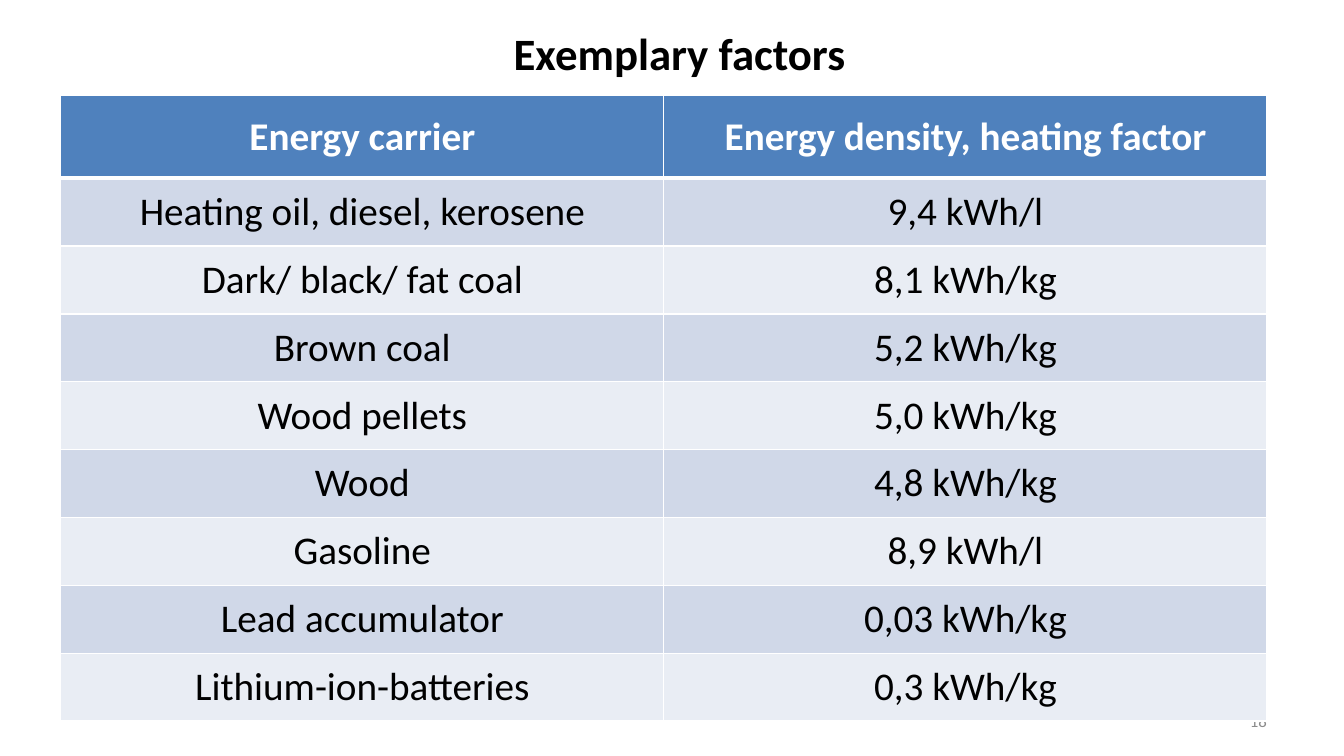
from pptx import Presentation
from pptx.dml.color import RGBColor
from pptx.enum.text import MSO_ANCHOR as Anchor, MSO_AUTO_SIZE as Fit, PP_ALIGN as Align
from pptx.oxml import parse_xml
from pptx.oxml.ns import nsdecls
from pptx.util import Cm, Pt

# Content
TITLE = "Exemplary factors"
PAGE = "18"
ROWS = [
    ("Energy carrier", "Energy density, heating factor"),
    ("Heating oil, diesel, kerosene", "9,4 kWh/l"),
    ("Dark/ black/ fat coal", "8,1 kWh/kg"),
    ("Brown coal", "5,2 kWh/kg"),
    ("Wood pellets", "5,0 kWh/kg"),
    ("Wood", "4,8 kWh/kg"),
    ("Gasoline", "8,9 kWh/l"),
    ("Lead accumulator", "0,03 kWh/kg"),
    ("Lithium-ion-batteries", "0,3 kWh/kg"),
]
HEAD, BANDS = "4F81BD", ("E9EDF4", "D0D8E8")
WHITE, BLACK, GREY = "FFFFFF", "000000", "8C8C8C"
HEAD_H, ROW_H, COL_W = 2.09, 1.71, 15.2


def color(code):
    return RGBColor.from_string(code)


def write(frame, text, size, code, align, bold=False):
    frame.text = text
    par = frame.paragraphs[0]
    par.alignment = align
    font = par.font
    font.name, font.size, font.bold = "Calibri", Pt(size), bold
    font.color.rgb = color(code)
    return par


def border(cell, side, width):
    return parse_xml(
        f'<a:ln{side} {nsdecls("a")} w="{Pt(width)}"><a:solidFill>'
        f'<a:srgbClr val="{WHITE}"/></a:solidFill></a:ln{side}>')


prs = Presentation()
prs.slide_width, prs.slide_height = Cm(33.87), Cm(19.05)
slide = prs.slides.add_slide(prs.slide_layouts[5])
shapes = slide.shapes

# Title
title = shapes.title
title.left, title.top, title.width, title.height = Cm(6.73), Cm(0.53), Cm(20.8), Cm(1.62)
frame = title.text_frame
frame.auto_size, frame.vertical_anchor = Fit.NONE, Anchor.TOP
write(frame, TITLE, 32, BLACK, Align.CENTER, True)

# Page number, partly under the table
page = shapes.add_textbox(Cm(24.28), Cm(17.65), Cm(7.9), Cm(1.02)).text_frame
page.word_wrap, page.vertical_anchor = True, Anchor.MIDDLE
write(page, PAGE, 12, GREY, Align.RIGHT)

# Table
high = HEAD_H + ROW_H * (len(ROWS) - 1)
table = shapes.add_table(len(ROWS), 2, Cm(1.53), Cm(2.4), Cm(2 * COL_W), Cm(high)).table
for col in table.columns:
    col.width = Cm(COL_W)
for r, row in enumerate(ROWS):
    top = r == 0
    table.rows[r].height = Cm(HEAD_H if top else ROW_H)
    for c, text in enumerate(row):
        cell = table.cell(r, c)
        cell.vertical_anchor = Anchor.MIDDLE
        cell.margin_left = cell.margin_right = Cm(0.18)
        cell.margin_top = cell.margin_bottom = 0
        cell.fill.solid()
        cell.fill.fore_color.rgb = color(HEAD if top else BANDS[r % 2])
        par = write(cell.text_frame, text, 28, WHITE if top else BLACK, Align.CENTER, top)
        par.space_after = Pt(6)
        # Borders come before the fill; the header rule is thicker
        props = cell._tc.get_or_add_tcPr()
        widths = {"L": 1, "R": 1, "T": 3 if r == 1 else 1, "B": 3 if top else 1}
        for i, (side, width) in enumerate(widths.items()):
            props.insert(i, border(cell, side, width))

prs.save("out.pptx")
